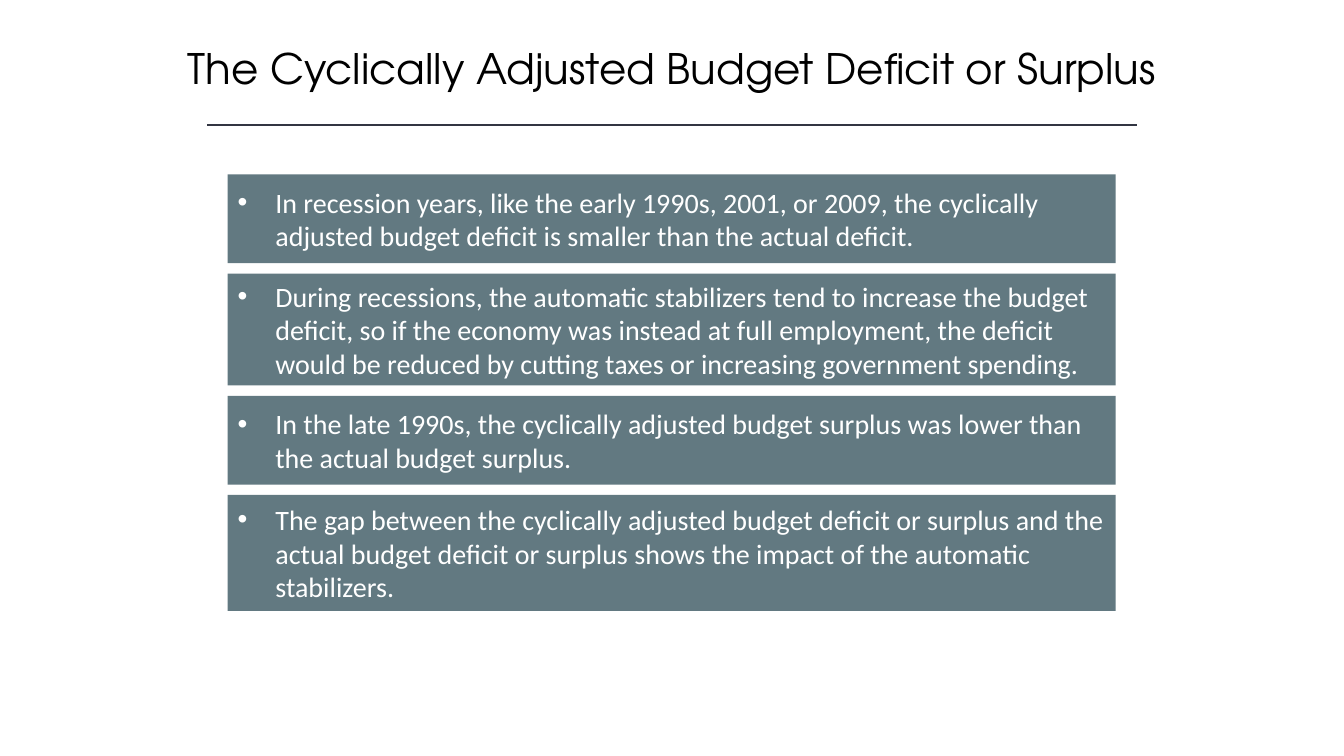
from dataclasses import dataclass

from lxml import etree
from pptx import Presentation
from pptx.dml.color import RGBColor
from pptx.enum import shapes, text
from pptx.oxml.ns import qn
from pptx.util import Pt


@dataclass(frozen=True)
class Theme:
    title_font: str = "TeX Gyre Adventor"
    body_font: str = "Calibri"
    title_size: float = 30
    body_size: float = 20
    title_color: RGBColor = RGBColor(0x00, 0x00, 0x00)
    body_color: RGBColor = RGBColor(0xFF, 0xFF, 0xFF)
    panel_color: RGBColor = RGBColor(0x62, 0x79, 0x81)
    rule_color: RGBColor = RGBColor(0x32, 0x35, 0x42)


THEME = Theme()
TITLE = "The Cyclically Adjusted Budget Deficit or Surplus"
PANEL_GAP = 7.4
BULLET_INDENT = 27

# Height of each panel and its statement
PANELS = [
    (63.4, "In recession years, like the early 1990s, 2001, or 2009, the cyclically "
           "adjusted budget deficit is smaller than the actual deficit."),
    (79.9, "During recessions, the automatic stabilizers tend to increase the budget "
           "deficit, so if the economy was instead at full employment, the deficit "
           "would be reduced by cutting taxes or increasing government spending."),
    (63.4, "In the late 1990s, the cyclically adjusted budget surplus was lower than "
           "the actual budget surplus."),
    (82.8, "The gap between the cyclically adjusted budget deficit or surplus and the "
           "actual budget deficit or surplus shows the impact of the automatic "
           "stabilizers."),
]


def write_text(shape, content, font, size, color, alignment):
    frame = shape.text_frame
    frame.word_wrap = True
    frame.text = content
    paragraph = frame.paragraphs[0]
    paragraph.alignment = alignment
    run_font = paragraph.runs[0].font
    run_font.name = font
    run_font.size = Pt(size)
    run_font.color.rgb = color
    return paragraph


def add_bullet(paragraph):
    properties = paragraph._p.get_or_add_pPr()
    properties.set("marL", str(Pt(BULLET_INDENT)))
    properties.set("indent", str(-Pt(BULLET_INDENT)))
    etree.SubElement(properties, qn("a:buFont")).set("typeface", "Arial")
    etree.SubElement(properties, qn("a:buChar")).set("char", "•")


def add_header(slide, left, top, width, height):
    """Centred title with a rule across the foot of the given box."""
    title = slide.shapes.add_textbox(Pt(left), Pt(top), Pt(width), Pt(44))
    write_text(title, TITLE, THEME.title_font, THEME.title_size,
               THEME.title_color, text.PP_ALIGN.CENTER)
    rule_inset = 28
    rule_y = Pt(top + height)
    rule = slide.shapes.add_connector(
        shapes.MSO_CONNECTOR.STRAIGHT,
        Pt(left + rule_inset), rule_y, Pt(left + width - rule_inset), rule_y)
    rule.line.color.rgb = THEME.rule_color
    rule.line.width = Pt(1)
    etree.SubElement(rule._element.spPr, qn("a:effectLst"))


def add_panel(slide, left, top, width, height, statement):
    panel = slide.shapes.add_shape(shapes.MSO_SHAPE.RECTANGLE,
                                   Pt(left), Pt(top), Pt(width), Pt(height))
    panel.shadow.inherit = False
    panel.fill.solid()
    panel.fill.fore_color.rgb = THEME.panel_color
    panel.line.fill.background()
    panel.text_frame.vertical_anchor = text.MSO_ANCHOR.MIDDLE
    add_bullet(write_text(panel, statement, THEME.body_font, THEME.body_size,
                          THEME.body_color, text.PP_ALIGN.LEFT))


def add_panel_stack(slide, left, top, width):
    for height, statement in PANELS:
        add_panel(slide, left, top, width, height, statement)
        top += height + PANEL_GAP


def main():
    presentation = Presentation()
    presentation.slide_width = Pt(960)
    presentation.slide_height = Pt(540)
    slide = presentation.slides.add_slide(presentation.slide_layouts[6])
    add_header(slide, left=120, top=26.6, width=720, height=62.7)
    add_panel_stack(slide, left=162.6, top=124.6, width=634.3)
    presentation.save("out.pptx")


if __name__ == "__main__":
    main()
